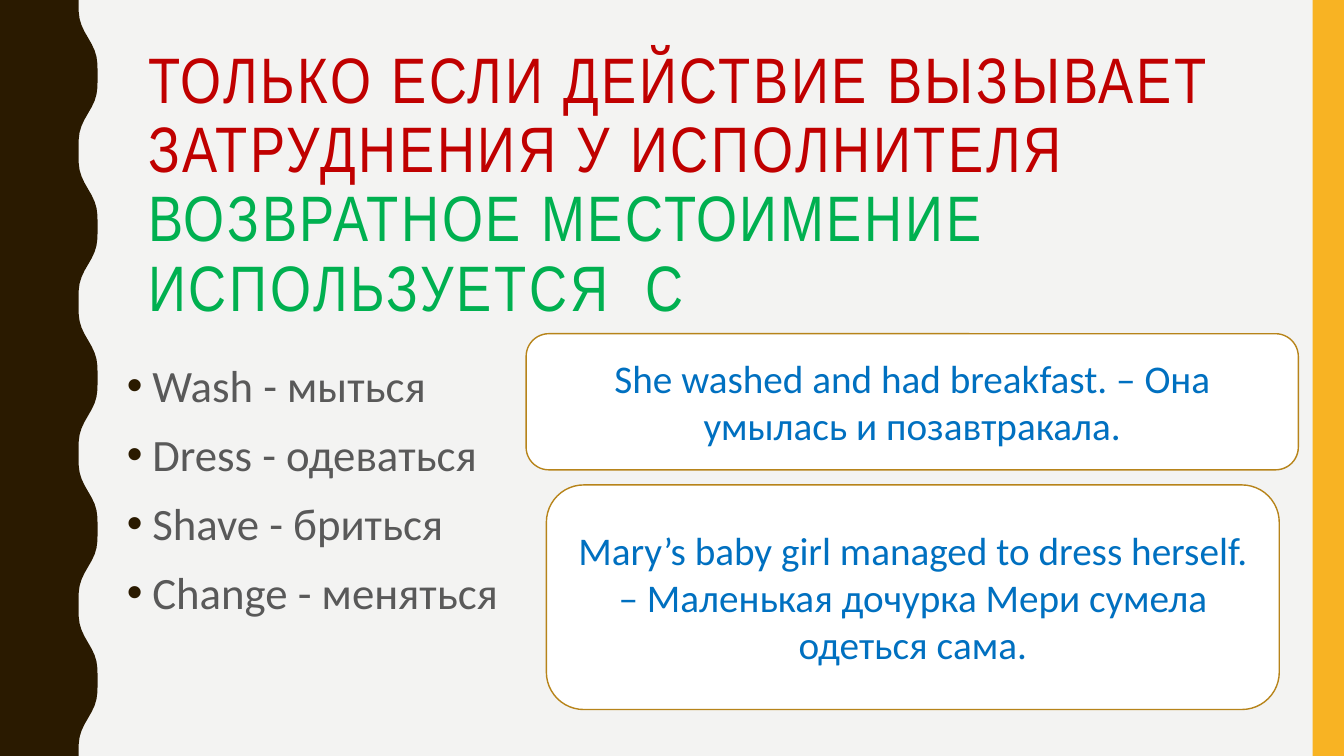
from math import cos, pi

from pptx import Presentation
from pptx.dml.color import RGBColor
from pptx.enum.shapes import MSO_SHAPE as SHAPE
from pptx.enum.text import MSO_ANCHOR as ANCHOR, MSO_AUTO_SIZE as AUTO, PP_ALIGN as ALIGN
from pptx.util import Cm, Pt
from lxml.etree import SubElement
from pptx.oxml.ns import qn

COLORS = {
    "paper": "F3F3F2", "bark": "2A1A00", "amber": "F8B323", "edge": "B7841A",
    "white": "FFFFFF", "red": "C00000", "green": "00B050", "grey": "595959", "blue": "0070C0",
}
WIDTH, HEIGHT = 33.87, 19.05
WAVES, STEPS = 5, 24
TITLE = [
    ("ТОЛЬКО ЕСЛИ ДЕЙСТВИЕ ВЫЗЫВАЕТ ЗАТРУДНЕНИЯ У ИСПОЛНИТЕЛЯ ", "red"),
    ("ВОЗВРАТНОЕ МЕСТОИМЕНИЕ ИСПОЛЬЗУЕТСЯ  С", "green"),
]
VERBS = ["Wash - мыться", "Dress - одеваться", "Shave - бриться", "Change - меняться"]
EXAMPLES = [
    ("She washed and had breakfast. – Она умылась и позавтракала.", (13.26, 8.41, 19.46, 3.43)),
    ("Mary’s baby girl managed to dress herself. – Маленькая дочурка Мери сумела одеться сама.",
     (13.77, 12.22, 18.47, 5.66)),
]


def rgb(name):
    """Return the named colour."""
    return RGBColor.from_string(COLORS[name])


def apply(obj, formats):
    """Set each attribute of the object from a dict."""
    for name, value in formats.items():
        setattr(obj, name, value)


def add_run(p, text, color, **formats):
    """Append a formatted run and return it."""
    r = p.add_run()
    r.text = text
    apply(r.font, formats)
    r.font.color.rgb = rgb(color)
    return r


def paint(sp, fill, line=None):
    """Give a shape a flat fill and an optional outline."""
    sp.shadow.inherit = False
    sp.fill.solid()
    sp.fill.fore_color.rgb = rgb(fill)
    if line:
        sp.line.color.rgb = rgb(line)
        sp.line.width = Pt(1)
    else:
        sp.line.fill.background()


def add_wavy_band(s, x, y, middle, height):
    """Draw the dark left band whose right edge is a wave."""
    points = []
    for i in range(WAVES * STEPS + 1):
        angle = 2 * pi * i / STEPS
        edge = x + middle - 0.27 * cos(angle) + 0.03 * cos(3 * angle)
        points.append((Cm(edge), Cm(y + height * i / (WAVES * STEPS))))
    builder = s.shapes.build_freeform(Cm(x), Cm(y))
    builder.add_line_segments(points + [(Cm(x), Cm(y + height))], close=True)
    paint(builder.convert_to_shape(), "bark")


def add_stripe(s, *box):
    """Draw the amber stripe on the right."""
    paint(s.shapes.add_shape(SHAPE.RECTANGLE, *map(Cm, box)), "amber")


def add_title(s, x, y, w, h):
    """Place and format the two-coloured title."""
    sp = s.shapes.title
    apply(sp, {"left": Cm(x), "top": Cm(y), "width": Cm(w), "height": Cm(h)})
    tf = sp.text_frame
    apply(tf, {"word_wrap": True, "auto_size": AUTO.NONE, "vertical_anchor": ANCHOR.TOP})
    p = tf.paragraphs[0]
    apply(p, {"alignment": ALIGN.LEFT, "line_spacing": 0.9})
    for text, color in TITLE:
        r = add_run(p, text, color, name="Arial Narrow", size=Pt(45.9))
        r.font._element.set("spc", "200")


def add_bullet(p, color):
    """Give a paragraph a hanging round bullet."""
    pPr = p._p.get_or_add_pPr()
    pPr.set("marL", str(Cm(0.64)))
    pPr.set("indent", str(-Cm(0.64)))
    SubElement(SubElement(pPr, qn("a:buClr")), qn("a:srgbClr")).set("val", COLORS[color])
    SubElement(pPr, qn("a:buFont")).set("typeface", "Arial")
    SubElement(pPr, qn("a:buChar")).set("char", "•")


def add_verbs(s, *box):
    """List the verbs as bullets."""
    tf = s.shapes.add_textbox(*map(Cm, box)).text_frame
    tf.word_wrap = True
    for i, verb in enumerate(VERBS):
        p = tf.add_paragraph() if i else tf.paragraphs[0]
        apply(p, {"line_spacing": 1.1, "space_before": Pt(7)})
        add_bullet(p, "bark")
        add_run(p, verb, "grey", name="Calibri", size=Pt(32))


def add_example(s, text, *box):
    """Draw a rounded card with an example sentence."""
    sp = s.shapes.add_shape(SHAPE.ROUNDED_RECTANGLE, *map(Cm, box))
    paint(sp, "white", "edge")
    tf = sp.text_frame
    apply(tf, {"word_wrap": True, "vertical_anchor": ANCHOR.MIDDLE})
    p = tf.paragraphs[0]
    p.alignment = ALIGN.CENTER
    add_run(p, text, "blue", name="Calibri", size=Pt(28))


def main():
    """Build and save the slide."""
    prs = Presentation()
    apply(prs, {"slide_width": Cm(WIDTH), "slide_height": Cm(HEIGHT)})
    s = prs.slides.add_slide(prs.slide_layouts[5])
    s.background.fill.solid()
    s.background.fill.fore_color.rgb = rgb("paper")
    add_wavy_band(s, 0, 0, 2.22, HEIGHT)
    add_stripe(s, WIDTH - 0.79, 0, 0.79, HEIGHT)
    add_title(s, 3.48, 1.07, 28.27, 7.72)
    add_verbs(s, 2.95, 8.76, 30.07, 7.95)
    for text, box in EXAMPLES:
        add_example(s, text, *box)
    prs.save("out.pptx")


if __name__ == "__main__":
    main()
